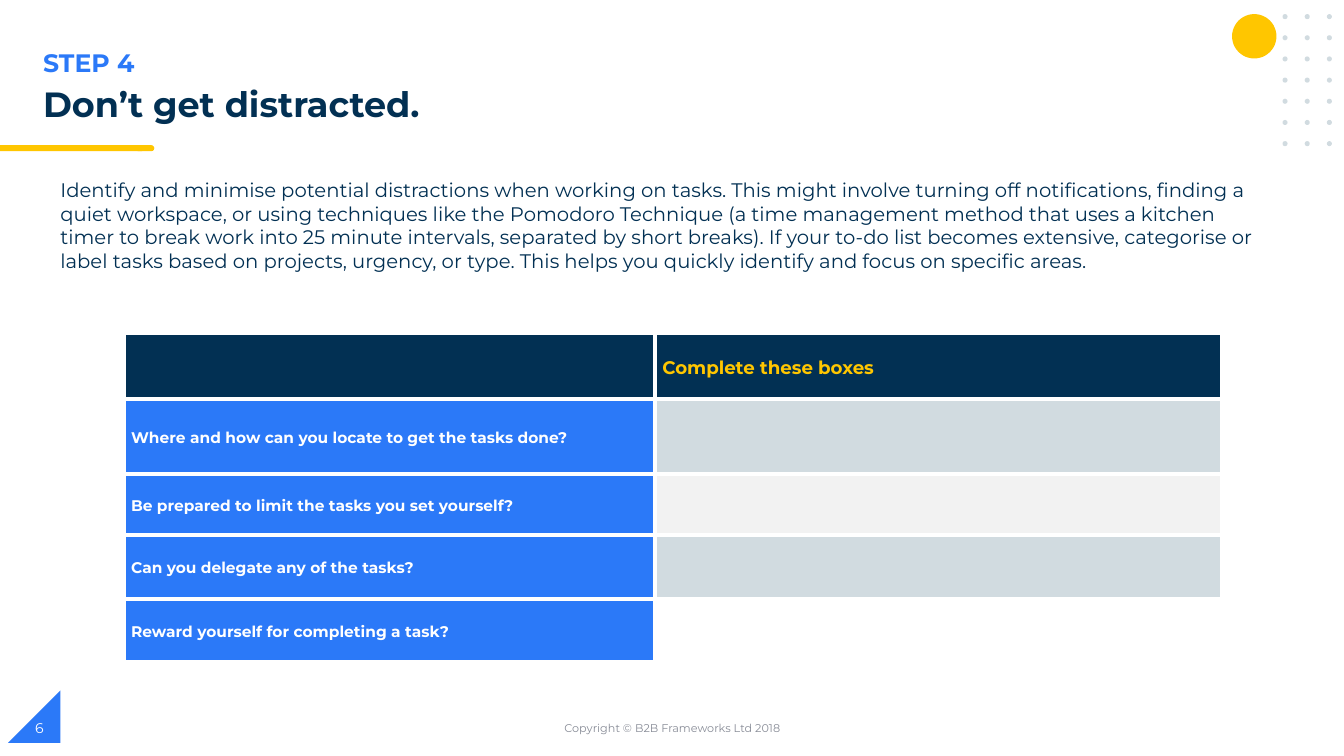
from lxml.etree import SubElement
from pptx import Presentation
from pptx.dml.color import RGBColor
from pptx.enum.shapes import MSO_SHAPE
from pptx.enum.text import MSO_ANCHOR, PP_ALIGN
from pptx.oxml.ns import qn
from pptx.util import Inches, Pt

FONT = "Montserrat"
BLUE = RGBColor(0x2B, 0x79, 0xF8)
NAVY = RGBColor(0x02, 0x30, 0x53)
YELLOW = RGBColor(0xFF, 0xC6, 0x00)
MIST = RGBColor(0xD1, 0xDB, 0xE0)
PALE = RGBColor(0xF2, 0xF2, 0xF2)
GREY = RGBColor(0x88, 0x8C, 0x97)
WHITE = RGBColor(0xFF, 0xFF, 0xFF)

# Content
STEP = "STEP 4"
TITLE = "Don’t get distracted."
ADVICE = (
    "Identify and minimise potential distractions when working on tasks. "
    "This might involve turning off notifications, finding a quiet workspace, "
    "or using techniques like the Pomodoro Technique (a time management method "
    "that uses a kitchen timer to break work into 25 minute intervals, separated "
    "by short breaks). If your to-do list becomes extensive, categorise or label "
    "tasks based on projects, urgency, or type. This helps you quickly identify "
    "and focus on specific areas."
)
COPYRIGHT = "Copyright © B2B Frameworks Ltd 2018"
PAGE = "6"
ANSWER_HEADING = "Complete these boxes"
# question, row height, fill of the answer box
QUESTIONS = [
    ("Where and how can you locate to get the tasks done?", 0.74, MIST),
    ("Be prepared to limit the tasks you set yourself?", 0.61, PALE),
    ("Can you delegate any of the tasks?", 0.63, MIST),
    ("Reward yourself for completing a task?", 0.63, WHITE),
]

# Layout, in inches
TABLE_LEFT, TABLE_TOP, HEADER_HEIGHT = 1.23, 3.31, 0.65
COLUMN_WIDTHS = (5.27, 5.62)
DOT_LEFT, DOT_TOP, DOT_SIZE = 12.72, 0.14, 0.05
DOT_COLUMNS, DOT_ROWS, DOT_STEP_X, DOT_STEP_Y = 3, 7, 0.22, 0.21


def add_block(slide, preset, box, colour):
    block = slide.shapes.add_shape(preset, *map(Inches, box))
    block.shadow.inherit = False
    block.fill.solid()
    block.fill.fore_color.rgb = colour
    block.line.fill.background()
    return block


def style(paragraph, size, colour, bold=False, spacing=None):
    paragraph.font.name = FONT
    paragraph.font.size = Pt(size)
    paragraph.font.bold = bold
    paragraph.font.color.rgb = colour
    if spacing:
        paragraph.line_spacing = spacing


def add_text(slide, text, box, size, colour, bold=False, spacing=None,
             align=PP_ALIGN.LEFT, anchor=MSO_ANCHOR.TOP):
    frame = slide.shapes.add_textbox(*map(Inches, box)).text_frame
    frame.word_wrap = True
    frame.vertical_anchor = anchor
    paragraph = frame.paragraphs[0]
    paragraph.text = text
    paragraph.alignment = align
    style(paragraph, size, colour, bold, spacing)


def fill_cell(cell, fill, text="", size=11, colour=WHITE):
    # White borders go before the fill in the cell properties
    properties = cell._tc.get_or_add_tcPr()
    for side in ("a:lnL", "a:lnR", "a:lnT", "a:lnB"):
        border = SubElement(properties, qn(side), w=str(Pt(3)))
        solid = SubElement(border, qn("a:solidFill"))
        SubElement(solid, qn("a:srgbClr"), val=str(WHITE))
    cell.fill.solid()
    cell.fill.fore_color.rgb = fill
    cell.vertical_anchor = MSO_ANCHOR.MIDDLE
    cell.margin_left = cell.margin_right = Inches(0.07)
    cell.margin_top = cell.margin_bottom = 0
    paragraph = cell.text_frame.paragraphs[0]
    paragraph.text = text
    style(paragraph, size, colour, True, 1.15)


def add_decoration(slide):
    corner = add_block(slide, MSO_SHAPE.RIGHT_TRIANGLE, (0.08, 6.85, 0.52, 0.52), BLUE)
    corner._element.spPr.xfrm.set("flipH", "1")
    # Yellow rule with a rounded end
    add_block(slide, MSO_SHAPE.FLOWCHART_TERMINATOR, (1.34, 1.44, 0.19, 0.06), YELLOW)
    add_block(slide, MSO_SHAPE.RECTANGLE, (0, 1.44, 1.41, 0.06), YELLOW)
    # Sun and dot grid
    add_block(slide, MSO_SHAPE.OVAL, (12.22, 0.14, 0.44, 0.44), YELLOW)
    for row in range(DOT_ROWS):
        for column in range(DOT_COLUMNS):
            dot = (DOT_LEFT + column * DOT_STEP_X, DOT_TOP + row * DOT_STEP_Y,
                   DOT_SIZE, DOT_SIZE)
            add_block(slide, MSO_SHAPE.OVAL, dot, MIST)


def add_questions(slide):
    heights = [HEADER_HEIGHT] + [height for _, height, _ in QUESTIONS]
    table = slide.shapes.add_table(
        len(heights), len(COLUMN_WIDTHS), Inches(TABLE_LEFT), Inches(TABLE_TOP),
        Inches(sum(COLUMN_WIDTHS)), Inches(sum(heights))).table
    for column, width in zip(table.columns, COLUMN_WIDTHS):
        column.width = Inches(width)
    for row, height in zip(table.rows, heights):
        row.height = Inches(height)
    fill_cell(table.cell(0, 0), NAVY)
    fill_cell(table.cell(0, 1), NAVY, ANSWER_HEADING, 13, YELLOW)
    for row, (question, _, answer_fill) in enumerate(QUESTIONS, start=1):
        fill_cell(table.cell(row, 0), BLUE, question)
        fill_cell(table.cell(row, 1), answer_fill)


def main():
    deck = Presentation()
    deck.slide_width, deck.slide_height = Inches(13.33), Inches(7.5)
    slide = deck.slides.add_slide(deck.slide_layouts[6])
    add_decoration(slide)
    # Headings and advice
    add_text(slide, STEP, (0.33, 0.42, 6.69, 0.4), 18, BLUE, bold=True)
    add_text(slide, TITLE, (0.33, 0.82, 5.64, 0.56), 25, NAVY, bold=True, spacing=0.9)
    add_text(slide, ADVICE, (0.5, 1.72, 12.18, 1.04), 14, NAVY)
    add_questions(slide)
    # Footer
    add_text(slide, COPYRIGHT, (4.42, 7.02, 4.5, 0.4), 8, GREY,
             align=PP_ALIGN.CENTER, anchor=MSO_ANCHOR.MIDDLE)
    add_text(slide, PAGE, (0.25, 7.02, 3, 0.4), 10, WHITE, anchor=MSO_ANCHOR.MIDDLE)
    deck.save("out.pptx")


if __name__ == "__main__":
    main()
